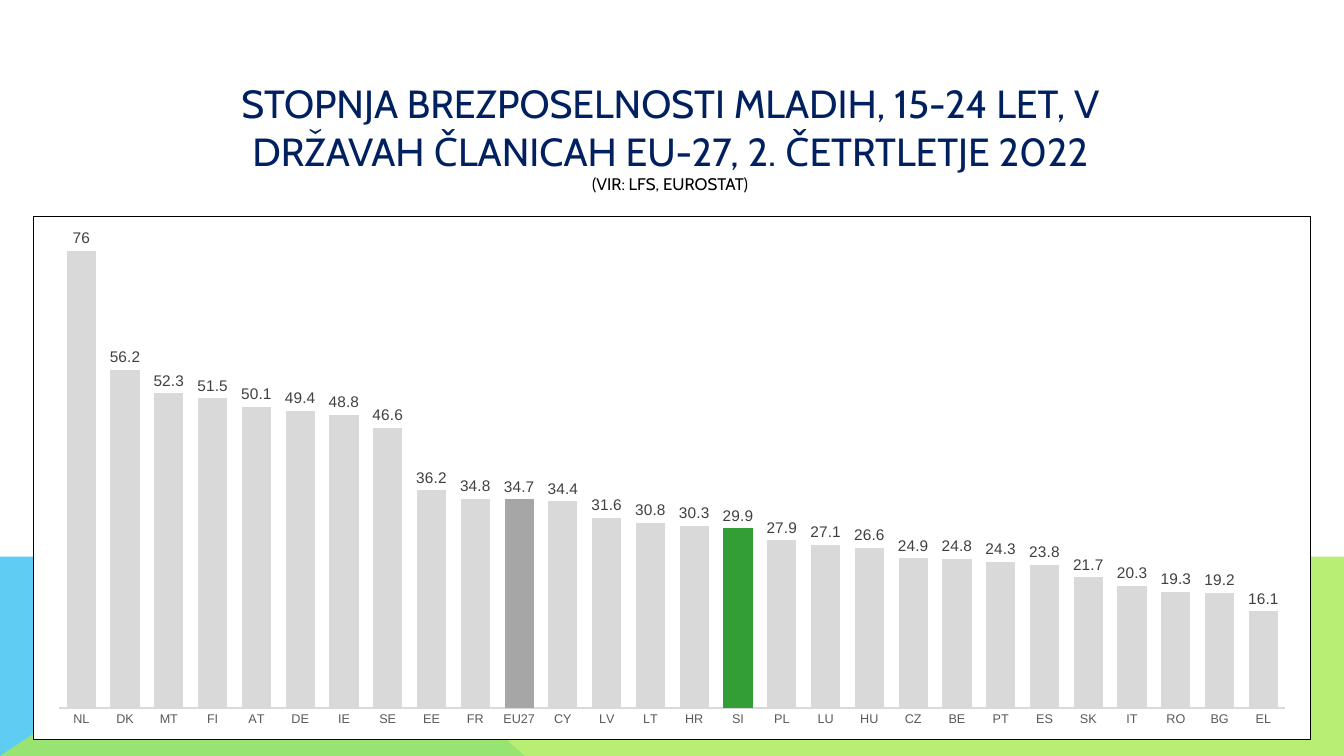
from lxml import etree
from pptx import Presentation
from pptx.chart.data import CategoryChartData as Data
from pptx.dml.color import RGBColor as RGB
from pptx.enum.chart import XL_CHART_TYPE as Kind, XL_LABEL_POSITION as Spot
from pptx.enum.chart import XL_TICK_LABEL_POSITION as Tick, XL_TICK_MARK as Mark
from pptx.enum.text import MSO_ANCHOR as Anchor, PP_ALIGN as Align
from pptx.oxml import parse_xml
from pptx.oxml.ns import nsdecls, qn
from pptx.util import Cm, Pt

HEAD = "STOPNJA BREZPOSELNOSTI MLADIH, 15-24 LET, V DRŽAVAH ČLANICAH EU-27, 2. ČETRTLETJE 2022"
SOURCE = "(VIR: LFS, EUROSTAT)"
RATES = {
    "NL": 76, "DK": 56.2, "MT": 52.3, "FI": 51.5, "AT": 50.1, "DE": 49.4, "IE": 48.8,
    "SE": 46.6, "EE": 36.2, "FR": 34.8, "EU27": 34.7, "CY": 34.4, "LV": 31.6, "LT": 30.8,
    "HR": 30.3, "SI": 29.9, "PL": 27.9, "LU": 27.1, "HU": 26.6, "CZ": 24.9, "BE": 24.8,
    "PT": 24.3, "ES": 23.8, "SK": 21.7, "IT": 20.3, "RO": 19.3, "BG": 19.2, "EL": 16.1,
}
COLORS = {
    "navy": "002060", "black": "000000", "white": "FFFFFF", "bar": "D9D9D9",
    "mean": "A6A6A6", "home": "339E35", "label": "404040", "axis": "595959",
    "blue": "5ECCF3", "lime": "A7EA52",
}
MARKED = {"EU27": "mean", "SI": "home"}
WIDE, HIGH, TOP = 33.87, 19.05, 14.03
BANDS = [
    ("blue", 100, [(0, HIGH), (0, TOP), (7.56, TOP), (13.23, HIGH)]),
    ("lime", 80, [(0, HIGH), (7.56, TOP), (WIDE, TOP), (WIDE, HIGH)]),
]
PLOT = {"x": 0.02, "y": 0.02, "w": 0.96, "h": 0.92}


def color(name):
    return RGB.from_string(COLORS[name])


def paint(fill, name):
    fill.solid()
    fill.fore_color.rgb = color(name)


def style(font, size, name, face="Arial"):
    font.size, font.name, font.color.rgb = Pt(size), face, color(name)


def add_band(slide, name, alpha, points):
    spots = [(Cm(x), Cm(y)) for x, y in points]
    pen = slide.shapes.build_freeform(*spots[0], scale=1.0)
    pen.add_line_segments(spots[1:], close=True)
    band = pen.convert_to_shape()
    band.shadow.inherit = False
    paint(band.fill, name)
    band.line.fill.background()
    if alpha < 100:
        tint = band.fill._xPr.find(".//" + qn("a:srgbClr"))
        etree.SubElement(tint, qn("a:alpha")).set("val", str(alpha * 1000))


def add_title(slide):
    box = slide.shapes.add_textbox(Cm(3.63), Cm(1.47), Cm(26.52), Cm(3.96))
    frame = box.text_frame
    frame.word_wrap = True
    frame.vertical_anchor = Anchor.MIDDLE
    para = frame.paragraphs[0]
    para.alignment = Align.CENTER
    run = para.add_run()
    run.text = HEAD
    style(run.font, 28, "navy", "Cabin")
    para.add_line_break()
    run = para.add_run()
    run.text = SOURCE
    style(run.font, 12, "black", "Cabin")


def frame_chart(chart):
    root = chart._chartSpace
    root.chart.addnext(parse_xml(
        f'<c:spPr {nsdecls("c", "a")}><a:solidFill><a:srgbClr val="{COLORS["white"]}"/></a:solidFill>'
        f'<a:ln w="{Pt(0.75)}"><a:solidFill><a:srgbClr val="{COLORS["black"]}"/></a:solidFill></a:ln></c:spPr>'))
    area = root.chart.plotArea
    for old in area.findall(qn("c:layout")):
        area.remove(old)
    rules = '<c:layoutTarget val="inner"/><c:xMode val="edge"/><c:yMode val="edge"/>'
    rules += "".join(f'<c:{key} val="{val}"/>' for key, val in PLOT.items())
    area.insert(0, parse_xml(
        f'<c:layout {nsdecls("c")}><c:manualLayout>{rules}</c:manualLayout></c:layout>'))


def add_rates(slide):
    data = Data()
    data.categories = list(RATES)
    data.add_series("Series 1", list(RATES.values()))
    chart = slide.shapes.add_chart(
        Kind.COLUMN_CLUSTERED, Cm(0.84), Cm(5.44), Cm(32.21), Cm(13.21), data).chart
    chart.has_legend = chart.has_title = False
    style(chart.font, 10, "black")

    lands, scale = chart.category_axis, chart.value_axis
    for axis in (lands, scale):
        axis.major_tick_mark = axis.minor_tick_mark = Mark.NONE
        axis.has_major_gridlines = False
        style(axis.tick_labels.font, 9, "axis")
    lands.format.line.color.rgb = color("bar")
    lands.format.line.width = Pt(1.5)
    scale.minimum_scale, scale.maximum_scale = 0, 80
    scale.tick_label_position = Tick.NONE
    scale.format.line.fill.background()

    plot = chart.plots[0]
    plot.gap_width, plot.overlap, plot.vary_by_categories = 50, -27, False
    bars = plot.series[0]
    paint(bars.format.fill, "bar")
    for land, name in MARKED.items():
        paint(bars.points[list(RATES).index(land)].format.fill, name)
    labels = bars.data_labels
    labels.show_value = True
    labels.position = Spot.OUTSIDE_END
    style(labels.font, 11, "label")
    frame_chart(chart)


def main():
    """Build the slide on youth unemployment in the EU-27."""
    deck = Presentation()
    deck.slide_width, deck.slide_height = Cm(WIDE), Cm(HIGH)
    slide = deck.slides.add_slide(deck.slide_layouts[6])
    for band in BANDS:
        add_band(slide, *band)
    add_title(slide)
    add_rates(slide)
    deck.save("out.pptx")


if __name__ == "__main__":
    main()
